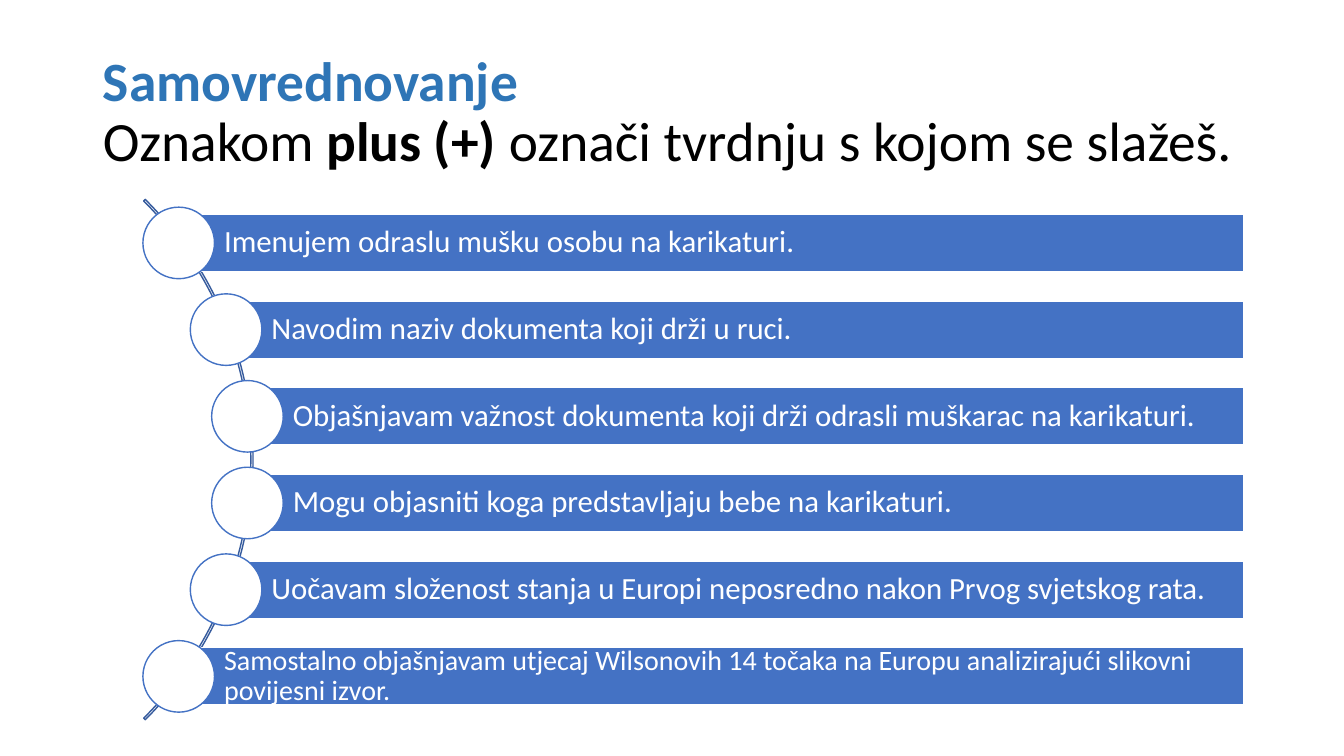
from math import sqrt

from pptx import Presentation
from pptx.dml.color import RGBColor
from pptx.enum.shapes import MSO_SHAPE
from pptx.enum.text import MSO_ANCHOR, MSO_AUTO_SIZE, PP_ALIGN
from pptx.util import Inches, Pt

ARC, BAR, CIRCLE = MSO_SHAPE.BLOCK_ARC, MSO_SHAPE.RECTANGLE, MSO_SHAPE.OVAL
LEFT, MIDDLE, NO_FIT = PP_ALIGN.LEFT, MSO_ANCHOR.MIDDLE, MSO_AUTO_SIZE.NONE

WHITE = RGBColor(0xFF, 0xFF, 0xFF)
BLACK = RGBColor(0x00, 0x00, 0x00)
BLUE = RGBColor(0x44, 0x72, 0xC4)
DARK_BLUE = RGBColor(0x36, 0x5B, 0x9D)
TITLE_BLUE = RGBColor(0x2E, 0x75, 0xB6)

# Square grid: the slide is 75 rows high, and columns are as wide as rows
GRID_ROWS = 75
ARC_X, ARC_Y, ARC_RADIUS = -11.4, 45.6, 36.5
CIRCLE_ORBIT = 36.2
CIRCLE_SIZE, BAR_HEIGHT, BAR_RIGHT = 7.1, 5.7, 123.4
STATEMENT_PITCH = 8.6

TITLE_LINES = [
    [("Samovrednovanje", TITLE_BLUE, True)],
    [("Oznakom ", BLACK, False), ("plus (+) ", BLACK, True),
     ("označi tvrdnju s kojom se slažeš.", BLACK, False)],
]
STATEMENTS = [
    ("Imenujem odraslu mušku osobu na karikaturi.", 22),
    ("Navodim naziv dokumenta koji drži u ruci.", 22),
    ("Objašnjavam važnost dokumenta koji drži odrasli muškarac na karikaturi.", 22),
    ("Mogu objasniti koga predstavljaju bebe na karikaturi.", 22),
    ("Uočavam složenost stanja u Europi neposredno nakon Prvog svjetskog rata.", 22),
    ("Samostalno objašnjavam utjecaj Wilsonovih 14 točaka na Europu "
     "analizirajući slikovni povijesni izvor.", 20),
]


class SlideBuilder:
    """Holds the text style, the grid and the current slide."""

    font_name = "Calibri"
    line_spacing = 0.9

    def __init__(self, presentation):
        self.cell = presentation.slide_height / GRID_ROWS
        self.slide = presentation.slides.add_slide(presentation.slide_layouts[5])

    def grid(self, *cells):
        return [round(count * self.cell) for count in cells]

    def style_paragraph(self, paragraph, size):
        paragraph.alignment = LEFT
        paragraph.line_spacing = self.line_spacing
        paragraph.font.name = self.font_name
        paragraph.font.size = Pt(size)

    def title(self, lines, left, top, width, height, size):
        title = self.slide.shapes.title
        title.left, title.top, title.width, title.height = self.grid(
            left, top, width, height)
        frame = title.text_frame
        frame.auto_size, frame.vertical_anchor = NO_FIT, MIDDLE
        paragraph = frame.paragraphs[0]
        self.style_paragraph(paragraph, size)
        for number, line in enumerate(lines):
            if number:
                paragraph.add_line_break()
            for text, color, bold in line:
                run = paragraph.add_run()
                run.text = text
                run.font.bold = bold
                run.font.color.rgb = color

    def shape(self, kind, left, top, width, height, fill, line):
        shape = self.slide.shapes.add_shape(
            kind, *self.grid(left, top, width, height))
        shape.shadow.inherit = False
        if fill is None:
            shape.fill.background()
        else:
            shape.fill.solid()
            shape.fill.fore_color.rgb = fill
        shape.line.color.rgb = line
        shape.line.width = Pt(1)
        return shape

    def arc(self, center_x, center_y, radius):
        arc = self.shape(ARC, center_x - radius, center_y - radius,
                         2 * radius, 2 * radius, None, DARK_BLUE)
        # Start angle, end angle and thickness
        for index, value in enumerate((189, 27, 0.003)):
            arc.adjustments[index] = value

    def bar(self, left, center_y, text, size):
        bar = self.shape(BAR, left, center_y - BAR_HEIGHT / 2,
                         BAR_RIGHT - left, BAR_HEIGHT, BLUE, WHITE)
        frame = bar.text_frame
        frame.word_wrap, frame.vertical_anchor = True, MIDDLE
        (frame.margin_left, frame.margin_top,
         frame.margin_right, frame.margin_bottom) = self.grid(4.5, 0.6, 0.6, 0.6)
        paragraph = frame.paragraphs[0]
        paragraph.text = text
        self.style_paragraph(paragraph, size)
        paragraph.font.color.rgb = WHITE

    def circle(self, center_x, center_y):
        self.shape(CIRCLE, center_x - CIRCLE_SIZE / 2, center_y - CIRCLE_SIZE / 2,
                   CIRCLE_SIZE, CIRCLE_SIZE, WHITE, BLUE)


def main():
    presentation = Presentation()
    presentation.slide_width = Inches(13.33)
    presentation.slide_height = Inches(7.5)
    builder = SlideBuilder(presentation)

    # Heading
    builder.title(TITLE_LINES, 9.2, 4, 115, 14.5, 39.6)

    # Statements, each starting at a circle that sits on the arc
    builder.arc(ARC_X, ARC_Y, ARC_RADIUS)
    middle = (len(STATEMENTS) - 1) / 2
    for number, (text, size) in enumerate(STATEMENTS):
        offset = (number - middle) * STATEMENT_PITCH
        center_x = ARC_X + sqrt(CIRCLE_ORBIT ** 2 - offset ** 2)
        builder.bar(center_x, ARC_Y + offset, text, size)
        builder.circle(center_x, ARC_Y + offset)

    presentation.save("out.pptx")


if __name__ == "__main__":
    main()
